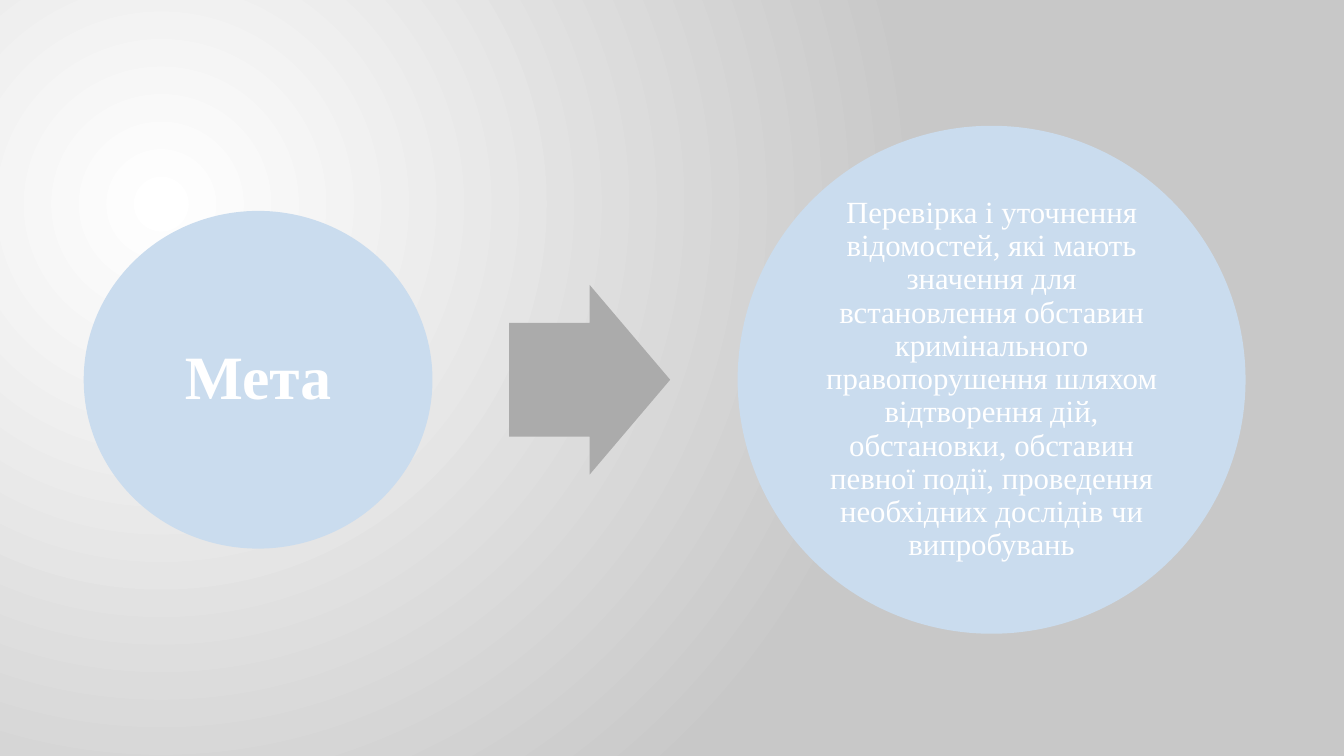
from dataclasses import dataclass

from lxml.etree import SubElement
from pptx import Presentation
from pptx.dml.color import RGBColor
from pptx.enum.shapes import MSO_SHAPE as Preset
from pptx.enum.text import MSO_ANCHOR as Anchor, PP_ALIGN as Align
from pptx.oxml.ns import qn
from pptx.util import Cm, Pt


@dataclass(frozen=True)
class Theme:
    font: str = "Times New Roman"
    glow: str = "FFFFFF"
    backdrop: str = "C8C8C8"
    circle: str = "CADCEE"
    arrow: str = "ABABAB"
    text: str = "FFFFFF"
    heading_size: int = 44
    body_size: int = 22


@dataclass(frozen=True)
class Box:
    left: float
    top: float
    width: float
    height: float

    def lengths(self):
        return [Cm(n) for n in (self.left, self.top, self.width, self.height)]


THEME = Theme()
PURPOSE = (
    "Перевірка і уточнення відомостей, які мають значення для встановлення "
    "обставин кримінального правопорушення шляхом відтворення дій, "
    "обстановки, обставин певної події, проведення необхідних дослідів "
    "чи випробувань"
)


def paint_background(page):
    """Radial glow centred in the upper left of the page."""
    fill = page.background.fill
    fill.gradient()
    for stop, color in zip(fill.gradient_stops, (THEME.glow, THEME.backdrop)):
        stop.color.rgb = RGBColor.from_string(color)
    gradient = page.background._cSld.find(".//" + qn("a:gradFill"))
    gradient.remove(gradient.find(qn("a:lin")))
    circle = SubElement(gradient, qn("a:path"), {"path": "circle"})
    SubElement(circle, qn("a:fillToRect"),
               {"l": "50000", "t": "55000", "r": "125000", "b": "100000"})


def add_flat_shape(page, preset, box, color):
    shape = page.shapes.add_shape(preset, *box.lengths())
    shape.shadow.inherit = False
    shape.fill.solid()
    shape.fill.fore_color.rgb = RGBColor.from_string(color)
    shape.line.fill.background()
    return shape


def add_circle(page, box, text, size, inset, bold=False):
    frame = add_flat_shape(page, Preset.OVAL, box, THEME.circle).text_frame
    frame.word_wrap = True
    frame.vertical_anchor = Anchor.MIDDLE
    frame.margin_left = frame.margin_right = Cm(inset)
    frame.margin_top = frame.margin_bottom = Cm(inset)
    para = frame.paragraphs[0]
    para.alignment = Align.CENTER
    para.line_spacing = 0.9
    span = para.add_run()
    span.text = text
    span.font.name = THEME.font
    span.font.size = Pt(size)
    span.font.bold = bold
    span.font.color.rgb = RGBColor.from_string(THEME.text)


def add_arrow(page, box):
    arrow = add_flat_shape(page, Preset.RIGHT_ARROW, box, THEME.arrow)
    arrow.adjustments[0] = 0.6
    arrow.adjustments[1] = 0.5


def add_goal_diagram(page, box):
    """Goal circle, arrow and explanation circle on one horizontal axis."""
    def centred(offset, width, height):
        return Box(box.left + offset, box.top + (box.height - height) / 2,
                   width, height)

    explanation = box.height
    add_circle(page, centred(0, 8.79, 8.51), "Мета",
               THEME.heading_size, 0.15, bold=True)
    add_arrow(page, centred(10.72, 4.06, 4.78))
    add_circle(page, centred(box.width - explanation, explanation, explanation),
               PURPOSE, THEME.body_size, 0.08)


def main():
    deck = Presentation()
    deck.slide_width, deck.slide_height = Cm(33.87), Cm(19.05)
    page = deck.slides.add_slide(deck.slide_layouts[6])
    paint_background(page)
    add_goal_diagram(page, Box(2.11, 3.17, 29.28, 12.8))
    deck.save("out.pptx")


if __name__ == "__main__":
    main()
